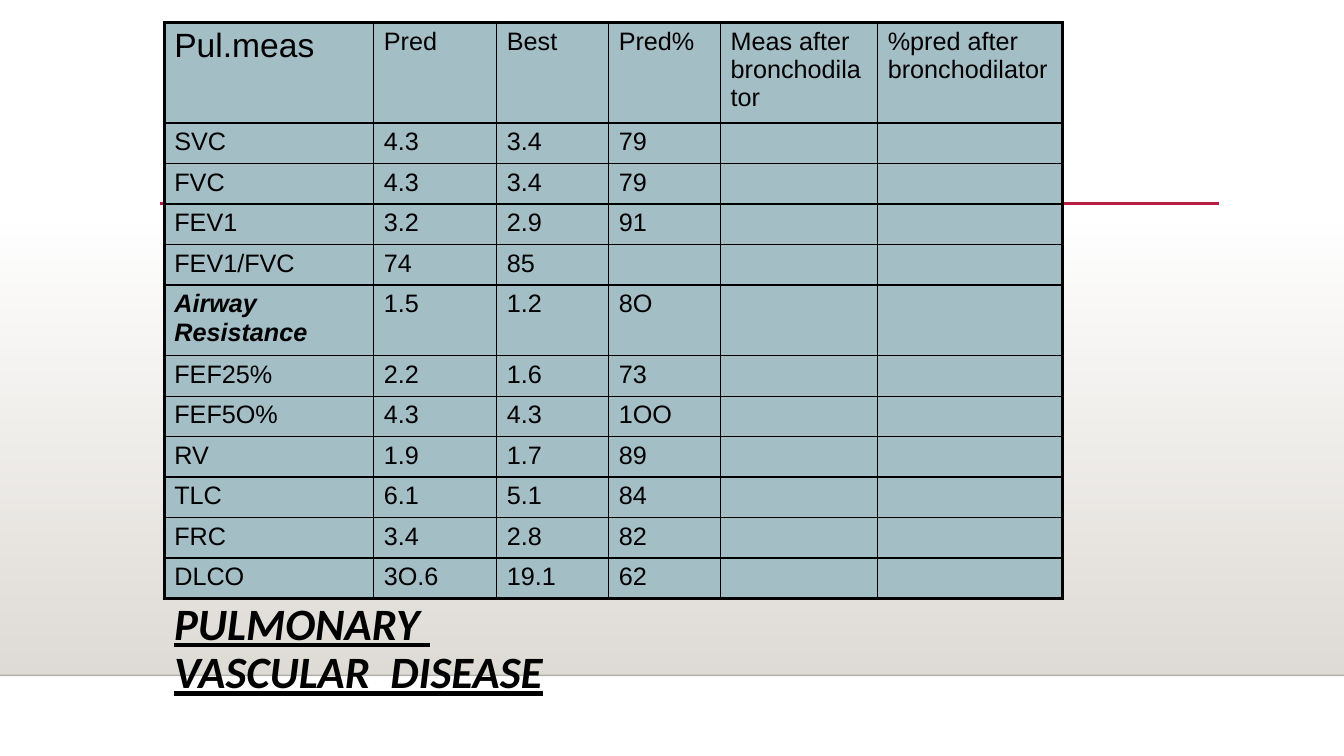
from lxml import etree
from pptx import Presentation
from pptx import oxml
from pptx.dml import color as dml
from pptx.enum import shapes, text
from pptx.oxml import ns
from pptx.util import Cm, Pt

COLORS = {"ink": "000000", "cell": "A4BEC6", "floor": "DFDBD5",
          "edge": "000001", "accent": "B71E42"}


def rgb(name):
    return dml.RGBColor.from_string(COLORS[name])


def set_alpha(color_element, percent):
    alpha = etree.SubElement(color_element, ns.qn("a:alpha"))
    alpha.set("val", str(percent * 1000))


presentation = Presentation()
presentation.slide_width, presentation.slide_height = Cm(33.87), Cm(19.05)
slide = presentation.slides.add_slide(presentation.slide_layouts[6])

# Background fade, from clear at the top to solid at the bottom
fade = slide.shapes.add_shape(shapes.MSO_SHAPE.RECTANGLE,
                              0, Cm(5.61), Cm(33.87), Cm(11.41))
fade.shadow.inherit = False
fade.line.fill.background()
fade.fill.gradient()
fade.fill.gradient_angle = 270
for stop, position in zip(fade.fill.gradient_stops, (0, 1)):
    stop.color.rgb = rgb("floor")
    stop.position = position
set_alpha(fade.element.spPr.find(".//" + ns.qn("a:srgbClr")), 0)

# Floor edge and accent rule: left, right, height, colour, width, opacity
for left, right, y, name, width, opacity in (
        (0, 33.87, 17.02, "edge", 1, 20),
        (4.04, 30.73, 5.13, "accent", 2.5, 100)):
    rule = slide.shapes.add_connector(shapes.MSO_CONNECTOR.STRAIGHT,
                                      Cm(left), Cm(y), Cm(right), Cm(y))
    rule.line.color.rgb = rgb(name)
    rule.line.width = Pt(width)
    properties = rule.element.spPr
    set_alpha(properties.find(".//" + ns.qn("a:srgbClr")), opacity)
    etree.SubElement(properties, ns.qn("a:effectLst"))

# Diagnosis title
title = slide.shapes.add_textbox(Cm(4.14), Cm(15.04), Cm(29.08), Cm(2.97))
title.text_frame.word_wrap = True
title.text_frame.vertical_anchor = text.MSO_ANCHOR.TOP
title.text_frame.text = "PULMONARY \vVASCULAR  DISEASE"
paragraph = title.text_frame.paragraphs[0]
paragraph.line_spacing = 0.9
for run in paragraph.runs:
    run.font.name = "Calibri"
    run.font.size = Pt(32)
    run.font.bold = run.font.italic = run.font.underline = True
    run.font.color.rgb = rgb("ink")

# Lung function table
measurements = [
    ("Pul.meas", "Pred", "Best", "Pred%",
     "Meas after bronchodilator", "%pred after bronchodilator"),
    ("SVC", "4.3", "3.4", "79", "", ""),
    ("FVC", "4.3", "3.4", "79", "", ""),
    ("FEV1", "3.2", "2.9", "91", "", ""),
    ("FEV1/FVC", "74", "85", "", "", ""),
    ("Airway Resistance", "1.5", "1.2", "8O", "", ""),
    ("FEF25%", "2.2", "1.6", "73", "", ""),
    ("FEF5O%", "4.3", "4.3", "1OO", "", ""),
    ("RV", "1.9", "1.7", "89", "", ""),
    ("TLC", "6.1", "5.1", "84", "", ""),
    ("FRC", "3.4", "2.8", "82", "", ""),
    ("DLCO", "3O.6", "19.1", "62", "", ""),
]
column_widths = (5.28, 3.1, 2.82, 2.82, 3.96, 4.65)
tall_rows = {0: 2.54, 5: 1.78}
last_row, last_column = len(measurements) - 1, len(column_widths) - 1

table = slide.shapes.add_table(len(measurements), len(column_widths),
                               Cm(4.14), Cm(0.56), Cm(22.63), Cm(14.48)).table
table.first_row = table.horz_banding = False
for column, width in zip(table.columns, column_widths):
    column.width = Cm(width)

for r, values in enumerate(measurements):
    table.rows[r].height = Cm(tall_rows.get(r, 1.02))
    for c, value in enumerate(values):
        cell = table.cell(r, c)

        # Borders: heavy on the outside, thin inside
        outer_sides = {"L": c == 0, "R": c == last_column,
                       "T": r == 0, "B": r == last_row}
        cell_properties = cell._tc.get_or_add_tcPr()
        for side, outer in outer_sides.items():
            width = Pt(2.25 if outer else 1)
            cell_properties.append(oxml.parse_xml(
                f'<a:ln{side} {ns.nsdecls("a")} w="{width}"><a:solidFill>'
                f'<a:srgbClr val="{COLORS["ink"]}"/></a:solidFill></a:ln{side}>'))
        cell.fill.solid()
        cell.fill.fore_color.rgb = rgb("cell")

        cell.text_frame.text = value
        for run in cell.text_frame.paragraphs[0].runs:
            run.font.name = "Arial"
            run.font.size = Pt(24 if r == c == 0 else 18)
            run.font.bold = run.font.italic = value == "Airway Resistance"
            run.font.color.rgb = rgb("ink")

presentation.save("out.pptx")
